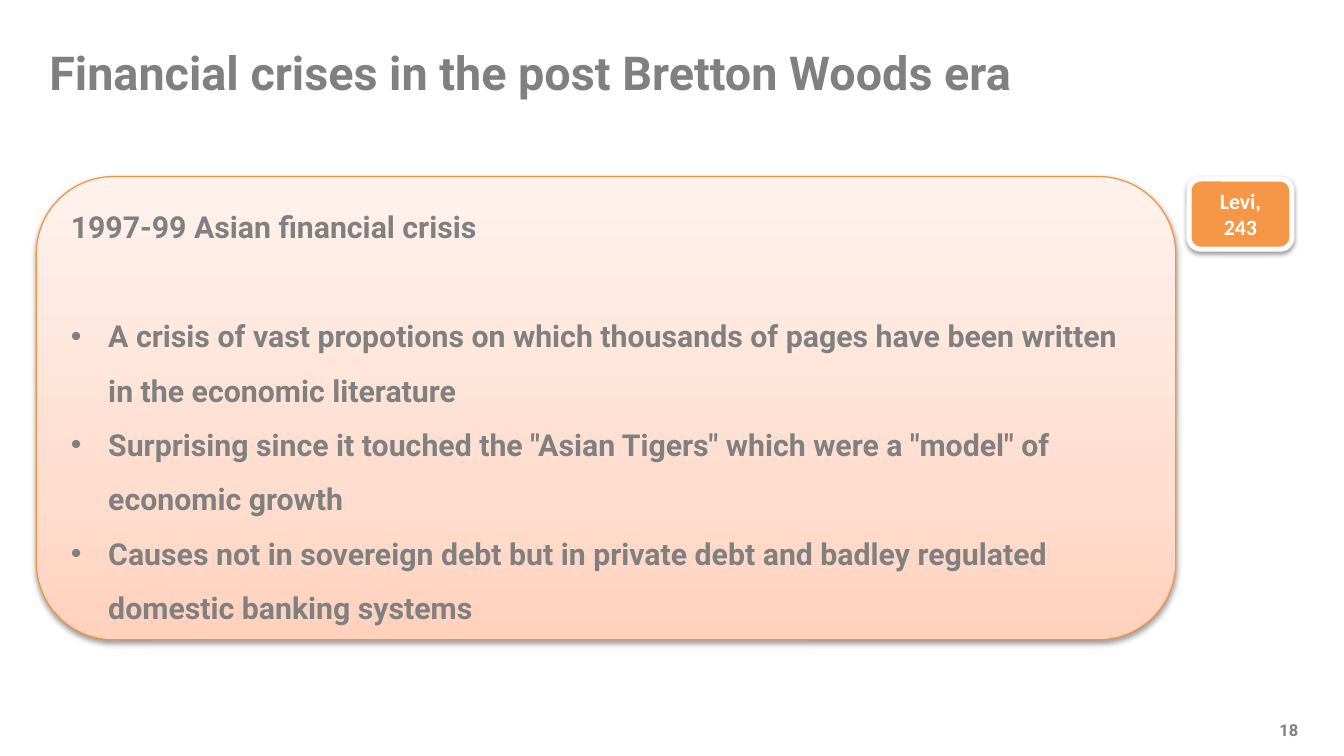
"""Build the slide on the 1997-99 Asian financial crisis."""
from pptx import Presentation
from pptx.dml.color import RGBColor
from pptx.enum.shapes import MSO_SHAPE
from pptx.enum.text import MSO_ANCHOR, PP_ALIGN
from pptx.oxml import parse_xml
from pptx.oxml.ns import nsdecls, qn
from pptx.util import Inches, Pt

COLORS = {
    "text": "808080", "white": "FFFFFF", "black": "000000",
    "border": "F69240", "tag": "F79646",
    "deep": "FFD2BD", "mid": "FFDED0", "pale": "FFF2ED",
}
BULLETS = [
    "A crisis of vast propotions on which thousands of pages have been written "
    "in the economic literature",
    'Surprising since it touched the "Asian Tigers" which were a "model" of '
    "economic growth",
    "Causes not in sovereign debt but in private debt and badley regulated "
    "domestic banking systems",
]


def rgb(name):
    return RGBColor.from_string(COLORS[name])


def add_run(p, text, size, color="text", font="Roboto"):
    r = p.add_run()
    r.text = text
    r.font.size = Pt(size)
    r.font.name = font
    r.font.bold = True
    r.font.color.rgb = rgb(color)


def add_text(s, box, text, size, align=PP_ALIGN.LEFT):
    tf = s.shapes.add_textbox(*map(Inches, box)).text_frame
    tf.word_wrap = True
    p = tf.paragraphs[0]
    p.alignment = align
    add_run(p, text, size)


def add_shadow(sp):
    sp.shadow.inherit = False
    sp._element.spPr.find(qn("a:effectLst")).append(parse_xml(
        f'<a:outerShdw {nsdecls("a")} blurRad="{Pt(3.1)}" dist="{Pt(1.6)}" '
        f'dir="5400000" rotWithShape="0"><a:srgbClr val="{COLORS["black"]}">'
        '<a:alpha val="38000"/></a:srgbClr></a:outerShdw>'))


def add_card(s, box, line, width):
    sp = s.shapes.add_shape(MSO_SHAPE.ROUNDED_RECTANGLE, *map(Inches, box))
    sp.line.color.rgb = rgb(line)
    sp.line.width = Pt(width)
    add_shadow(sp)
    tf = sp.text_frame
    tf.word_wrap = True
    tf.vertical_anchor = MSO_ANCHOR.MIDDLE
    return sp


def fill_gradient(sp, stops):
    sp.fill.gradient()
    sp.fill.gradient_angle = 90
    gs_list = sp._element.spPr.find(qn("a:gradFill")).find(qn("a:gsLst"))
    for gs in list(gs_list):
        gs_list.remove(gs)
    for pos, name in stops:
        gs_list.append(parse_xml(
            f'<a:gs {nsdecls("a")} pos="{pos * 1000}">'
            f'<a:srgbClr val="{COLORS[name]}"/></a:gs>'))


def set_bullet(p):
    pPr = p._p.get_or_add_pPr()
    pPr.set("marL", str(Inches(0.31)))
    pPr.set("indent", str(Inches(-0.31)))
    for xml in ('<a:buFont {} typeface="Arial"/>', '<a:buChar {} char="•"/>'):
        pPr.append(parse_xml(xml.format(nsdecls("a"))))


def add_crisis_card(s):
    sp = add_card(s, (0.3, 1.46, 9.42, 3.83), "border", 0.75)
    fill_gradient(sp, [(0, "deep"), (35, "mid"), (100, "pale")])
    tf = sp.text_frame
    heading = tf.paragraphs[0]
    add_run(heading, "1997-99 Asian financial crisis", 18)
    for i, text in enumerate(BULLETS):
        p = tf.add_paragraph()
        set_bullet(p)
        if i == 0:
            p.space_before = Pt(32.4)
        add_run(p, text, 18)
    for p in tf.paragraphs:
        p.alignment = PP_ALIGN.LEFT
        p.line_spacing = 1.5


def add_source_tag(s):
    sp = add_card(s, (9.83, 1.48, 0.85, 0.58), "white", 3)
    sp.fill.solid()
    sp.fill.fore_color.rgb = rgb("tag")
    p = sp.text_frame.paragraphs[0]
    p.alignment = PP_ALIGN.CENTER
    add_run(p, "Levi, 243", 13, "white", "Calibri")


def main():
    prs = Presentation()
    prs.slide_height = Inches(6.25)
    prs.slide_width = prs.slide_height * 16 // 9
    s = prs.slides.add_slide(prs.slide_layouts[6])
    add_text(s, (0.31, 0.31, 10.54, 0.57),
             "Financial crises in the post Bretton Woods era", 27.8)
    add_text(s, (10.46, 5.9, 0.39, 0.27), "18", 9.8, PP_ALIGN.CENTER)
    add_crisis_card(s)
    add_source_tag(s)
    prs.save("out.pptx")


if __name__ == "__main__":
    main()
